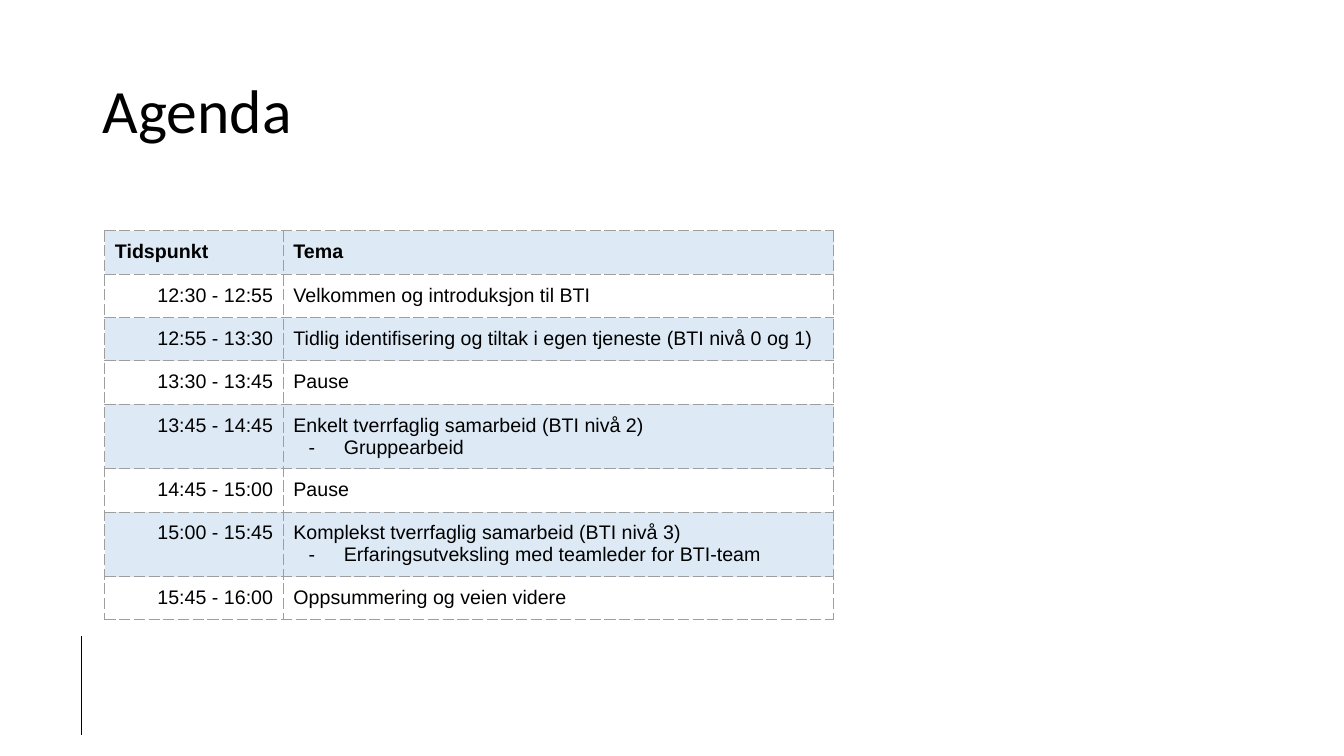
"""Build the agenda slide with its timetable."""
from lxml.etree import SubElement
from pptx import Presentation
from pptx.dml.color import RGBColor
from pptx.enum.shapes import MSO_CONNECTOR
from pptx.enum.text import MSO_ANCHOR, PP_ALIGN
from pptx.oxml import parse_xml
from pptx.oxml.ns import nsdecls, qn
from pptx.util import Inches, Pt

BLACK, BAND, BORDER = "000000", "DDEAF6", "9E9E9E"
AGENDA = [
    ("Tidspunkt", ["Tema"]),
    ("12:30 - 12:55", ["Velkommen og introduksjon til BTI"]),
    ("12:55 - 13:30", ["Tidlig identifisering og tiltak i egen tjeneste (BTI nivå 0 og 1)"]),
    ("13:30 - 13:45", ["Pause"]),
    ("13:45 - 14:45", ["Enkelt tverrfaglig samarbeid (BTI nivå 2)", "Gruppearbeid"]),
    ("14:45 - 15:00", ["Pause"]),
    ("15:00 - 15:45", ["Komplekst tverrfaglig samarbeid (BTI nivå 3)",
                       "Erfaringsutveksling med teamleder for BTI-team"]),
    ("15:45 - 16:00", ["Oppsummering og veien videre"]),
]


def color(value):
    return RGBColor.from_string(value)


def add_dash_bullet(para):
    properties = para._p.get_or_add_pPr()
    properties.set("marL", str(Inches(0.5)))
    properties.set("indent", str(Inches(-0.35)))
    bullet_color = SubElement(properties, qn("a:buClr"))
    SubElement(bullet_color, qn("a:srgbClr"), val=BLACK)
    SubElement(properties, qn("a:buFont"), typeface="Arial")
    SubElement(properties, qn("a:buChar"), char="-")


deck = Presentation()
deck.slide_width, deck.slide_height = Inches(13.33), Inches(7.5)
page = deck.slides.add_slide(deck.slide_layouts[5])

rule = page.shapes.add_connector(
    MSO_CONNECTOR.STRAIGHT, Inches(0.81), Inches(6.31), Inches(0.81), Inches(7.29))
rule.line.color.rgb = color(BLACK)
rule.line.width = Pt(0.75)
SubElement(rule._element.spPr, qn("a:effectLst"))

title = page.shapes.title
title.left, title.top = Inches(0.92), Inches(0.4)
title.width, title.height = Inches(11.5), Inches(1.45)
title.text_frame.text = "Agenda"
title.text_frame.vertical_anchor = MSO_ANCHOR.MIDDLE
heading = title.text_frame.paragraphs[0]
heading.alignment = PP_ALIGN.LEFT
heading.line_spacing = 0.9
heading_font = heading.runs[0].font
heading_font.name, heading_font.size = "Calibri", Pt(44)
heading_font.color.rgb = color(BLACK)

timetable = page.shapes.add_table(
    len(AGENDA), 2, Inches(1.04), Inches(2.29), Inches(7.23), Inches(3.44)).table
timetable.first_row = timetable.horz_banding = False
for column, width in zip(timetable.columns, (1.77, 5.46)):
    column.width = Inches(width)

for row_index, (time, topics) in enumerate(AGENDA):
    timetable.rows[row_index].height = Inches(0.43 if len(topics) == 1 else 0.64)
    for column_index, lines in enumerate(([time], topics)):
        cell = timetable.cell(row_index, column_index)
        cell.margin_left = cell.margin_right = Inches(0.1)
        cell.margin_top = cell.margin_bottom = Inches(0.1)
        for side in ("lnL", "lnR", "lnT", "lnB"):
            cell._tc.get_or_add_tcPr().append(parse_xml(
                f'<a:{side} {nsdecls("a")} w="{Pt(0.75)}"><a:solidFill>'
                f'<a:srgbClr val="{BORDER}"/></a:solidFill>'
                f'<a:prstDash val="dash"/></a:{side}>'))
        if row_index % 2 == 0:
            cell.fill.solid()
            cell.fill.fore_color.rgb = color(BAND)
        else:
            cell.fill.background()
        cell.text_frame.text = "\n".join(lines)
        for line_index, para in enumerate(cell.text_frame.paragraphs):
            if line_index > 0:
                add_dash_bullet(para)
            if column_index == 0 and row_index > 0:
                para.alignment = PP_ALIGN.RIGHT
            span = para.runs[0]
            span.font.name, span.font.size = "Arial", Pt(14)
            span.font.bold = row_index == 0
            span.font.color.rgb = color(BLACK)

deck.save("out.pptx")
